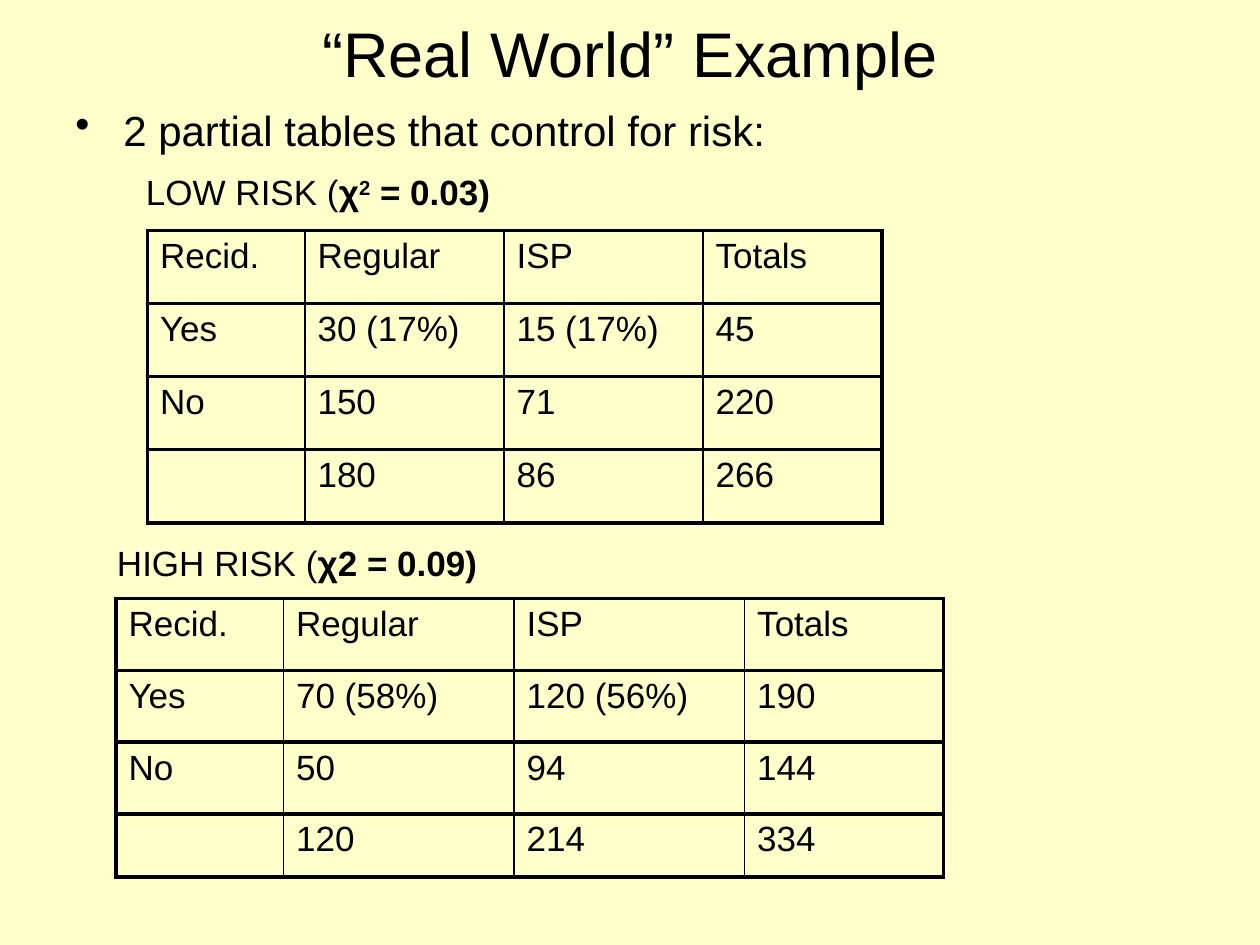
from lxml import etree
from pptx import Presentation
from pptx.dml.color import RGBColor
from pptx.enum.text import MSO_ANCHOR, PP_ALIGN
from pptx.oxml.ns import qn
from pptx.util import Inches, Pt

CENTER = PP_ALIGN.CENTER
TOP, MIDDLE = MSO_ANCHOR.TOP, MSO_ANCHOR.MIDDLE
BLACK = RGBColor(0x00, 0x00, 0x00)
CREAM = RGBColor(0xFF, 0xFF, 0xCC)
THIN, THICK = 1, 2.25
HEAD = ["Recid.", "Regular", "ISP", "Totals"]
LOW = [
    HEAD,
    ["Yes", "30 (17%)", "15 (17%)", "45"],
    ["No", "150", "71", "220"],
    ["", "180", "86", "266"],
]
HIGH = [
    HEAD,
    ["Yes", "70 (58%)", "120 (56%)", "190"],
    ["No", "50", "94", "144"],
    ["", "120", "214", "334"],
]


class Deck:
    """Holds the text style and the current slide."""

    font = "Arial"
    size = 20

    def __init__(self):
        self.prs = Presentation()
        self.prs.slide_width, self.prs.slide_height = Inches(10), Inches(7.5)
        self.slide = self.prs.slides.add_slide(self.prs.slide_layouts[6])
        fill = self.slide.background.fill
        fill.solid()
        fill.fore_color.rgb = CREAM

    def run(self, para, text, size=size, bold=False, base=0):
        """Add a run; base is the superscript rise in percent."""
        run = para.add_run()
        run.text = text
        style = {"name": self.font, "size": Pt(size), "bold": bold}
        for key, value in style.items():
            setattr(run.font, key, value)
        run.font.color.rgb = BLACK
        if base:
            run._r.get_or_add_rPr().set("baseline", str(base * 1000))

    def box(self, left, top, width, height, anchor=TOP, inset=0.05):
        shape = self.slide.shapes.add_textbox(
            Inches(left), Inches(top), Inches(width), Inches(height))
        frame = shape.text_frame
        style = {"word_wrap": True, "vertical_anchor": anchor,
                 "margin_top": Inches(inset)}
        for key, value in style.items():
            setattr(frame, key, value)
        return frame

    def indent(self, para, left, hang=0, bullet=None):
        props = para._p.get_or_add_pPr()
        props.set("marL", str(Inches(left)))
        props.set("indent", str(-Inches(hang)))
        if bullet:
            etree.SubElement(props, qn("a:buChar")).set("char", bullet)

    def border(self, cell, widths):
        """Draw black cell edges; widths maps L, R, T, B to points."""
        props = cell._tc.get_or_add_tcPr()
        for side, width in widths.items():
            line = etree.SubElement(props, qn(f"a:ln{side}"))
            line.set("w", str(Pt(width)))
            fill = etree.SubElement(line, qn("a:solidFill"))
            etree.SubElement(fill, qn("a:srgbClr")).set("val", str(BLACK))

    def table(self, left, top, cols, rows, data):
        table = self.slide.shapes.add_table(
            len(rows), len(cols), Inches(left), Inches(top),
            Inches(sum(cols)), Inches(sum(rows))).table
        table.first_row = table.horz_banding = False
        for col, width in zip(table.columns, cols):
            col.width = Inches(width)
        for row, height, texts in zip(table.rows, rows, data):
            row.height = Inches(height)
            for i, (cell, text) in enumerate(zip(row.cells, texts)):
                self.border(cell, {
                    "L": THICK if i == 0 else THIN,
                    "R": THICK if i == len(cols) - 1 else THIN,
                    "T": THICK, "B": THICK})
                cell.fill.background()
                if text:
                    self.run(cell.text_frame.paragraphs[0], text)


def main():
    deck = Deck()

    title = deck.box(0.5, 0, 9, 0.83, MIDDLE).paragraphs[0]
    title.alignment = CENTER
    deck.run(title, "“Real World” Example", 36)

    body = deck.box(0.5, 0.75, 8.92, 1, inset=0.08)
    point = body.paragraphs[0]
    deck.indent(point, 0.38, 0.38, "•")
    deck.run(point, "2 partial tables that control for risk:", 24)

    low = body.add_paragraph()
    low.space_before = Pt(9)
    deck.indent(low, 0.56)
    deck.run(low, "LOW RISK (")
    deck.run(low, "χ", bold=True)
    deck.run(low, "2", bold=True, base=30)
    deck.run(low, " = 0.03)", bold=True)
    deck.table(1.17, 1.83, [1.25, 1.58, 1.58, 1.42], [0.58] * 4, LOW)

    high = deck.box(0.83, 4.25, 7.68, 0.43).paragraphs[0]
    deck.run(high, "HIGH RISK (")
    deck.run(high, "χ2 = 0.09)", bold=True)
    deck.table(0.92, 4.75, [1.33, 1.83, 1.83, 1.58], [0.57] * 3 + [0.5], HIGH)

    deck.prs.save("out.pptx")


if __name__ == "__main__":
    main()
